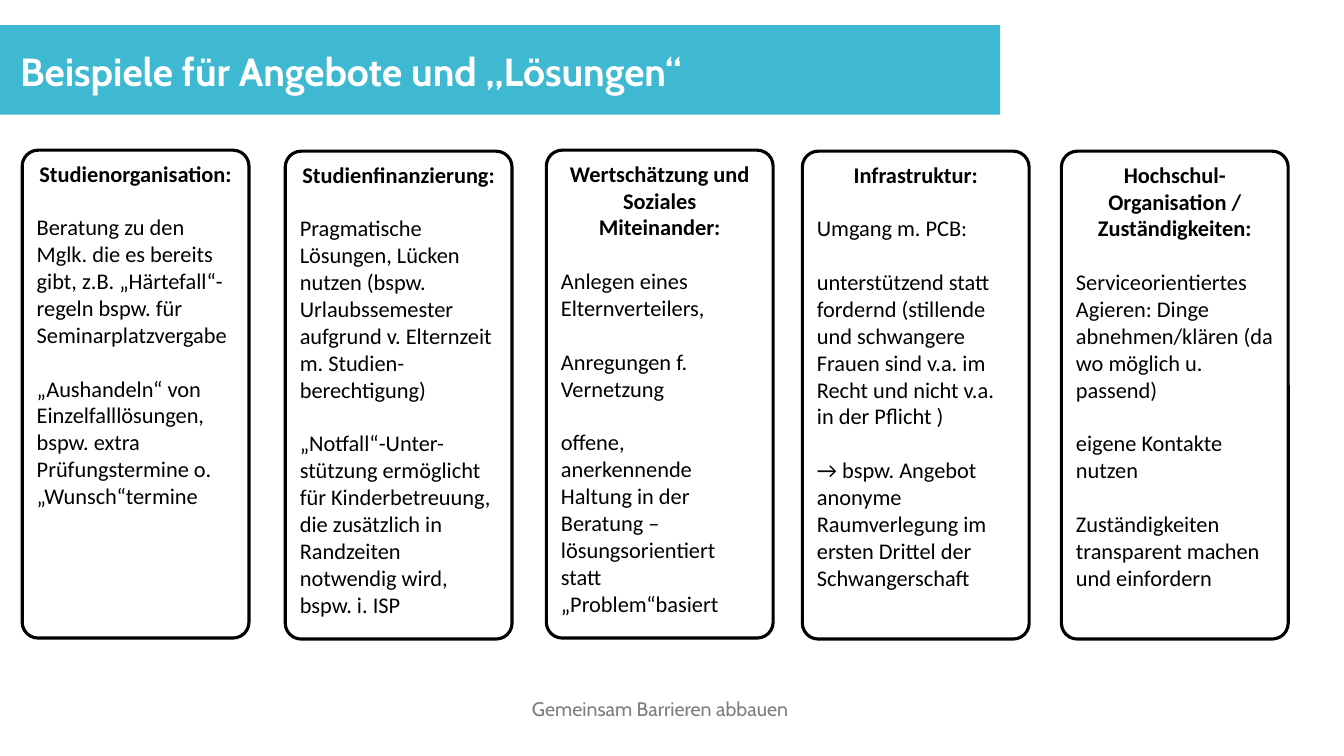
from pptx import Presentation
from pptx.dml.color import RGBColor
from pptx.enum import shapes, text
from pptx.util import Pt

TEAL = RGBColor(0x3F, 0xB9, 0xD2)
WHITE = RGBColor(0xFF, 0xFF, 0xFF)
BLACK = RGBColor(0, 0, 0)
GREY = RGBColor(0x7E, 0x7E, 0x7E)

TITLE = "Beispiele für Angebote und „Lösungen“"
FOOTER = "Gemeinsam Barrieren abbauen"
CARDS = [
    (15.84, 107.28, ["Studienorganisation:"], [
        "Beratung zu den Mglk. die es bereits gibt, z.B. „Härtefall“- regeln bspw. für Seminarplatzvergabe",
        "„Aushandeln“ von Einzelfalllösungen, bspw. extra Prüfungstermine o. „Wunsch“termine",
    ]),
    (203.76, 108, ["Studienfinanzierung:"], [
        "Pragmatische Lösungen, Lücken nutzen (bspw. Urlaubssemester aufgrund v. Elternzeit m. Studien-berechtigung)",
        "„Notfall“-Unter-stützung ermöglicht für Kinderbetreuung, die zusätzlich in Randzeiten notwendig wird, bspw. i. ISP",
    ]),
    (390.24, 107.28, ["Wertschätzung und", "Soziales Miteinander:"], [
        "Anlegen eines Elternverteilers,",
        "Anregungen f. Vernetzung",
        "offene, anerkennende Haltung in der Beratung – lösungsorientiert statt „Problem“basiert",
    ]),
    (573.12, 108, ["Infrastruktur:"], [
        "Umgang m. PCB:",
        "unterstützend statt fordernd (stillende und schwangere Frauen sind v.a. im Recht und nicht v.a. in der Pflicht )",
        "→ bspw. Angebot anonyme Raumverlegung im ersten Drittel der Schwangerschaft",
    ]),
    (758.16, 108, ["Hochschul-", "Organisation / Zuständigkeiten:"], [
        "Serviceorientiertes Agieren: Dinge abnehmen/klären (da wo möglich u. passend)",
        "eigene Kontakte nutzen",
        "Zuständigkeiten transparent machen und einfordern",
    ]),
]
CARD_WIDTH, CARD_HEIGHT = 162, 348.48
CARD_CORNER = 0.07
PARAGRAPH_GAP = 19.2


def add_run(paragraph, words, size, font_name, color, bold=False):
    run = paragraph.add_run()
    run.text = words
    run.font.size = Pt(size)
    run.font.name = font_name
    run.font.bold = bold
    run.font.color.rgb = color


def prepare_frame(shape, left, top, right, bottom):
    frame = shape.text_frame
    frame.word_wrap = True
    frame.vertical_anchor = text.MSO_ANCHOR.TOP
    frame.margin_left, frame.margin_top = Pt(left), Pt(top)
    frame.margin_right, frame.margin_bottom = Pt(right), Pt(bottom)
    return frame


def add_card(slide, left, top, headings, entries):
    card = slide.shapes.add_shape(shapes.MSO_SHAPE.ROUNDED_RECTANGLE,
                                  Pt(left), Pt(top), Pt(CARD_WIDTH), Pt(CARD_HEIGHT))
    card.adjustments[0] = CARD_CORNER
    card.shadow.inherit = False
    card.fill.background()
    card.line.color.rgb = BLACK
    card.line.width = Pt(2.25)
    frame = prepare_frame(card, 7.2, 3.6, 7.2, 3.6)
    for index, words in enumerate(headings + entries):
        is_heading = index < len(headings)
        paragraph = frame.add_paragraph() if index else frame.paragraphs[0]
        paragraph.alignment = text.PP_ALIGN.CENTER if is_heading else text.PP_ALIGN.LEFT
        if not is_heading:
            paragraph.space_before = Pt(PARAGRAPH_GAP)
        add_run(paragraph, words, 16, "Calibri", BLACK, is_heading)


def main():
    presentation = Presentation()
    presentation.slide_width, presentation.slide_height = Pt(960), Pt(540)
    slide = presentation.slides.add_slide(presentation.slide_layouts[6])

    banner = slide.shapes.add_shape(shapes.MSO_SHAPE.RECTANGLE, 0, Pt(18), Pt(714.5), Pt(64))
    banner.shadow.inherit = False
    banner.fill.solid()
    banner.fill.fore_color.rgb = TEAL
    banner.line.fill.background()

    title = slide.shapes.add_textbox(0, Pt(30.24), Pt(540), Pt(41))
    title_frame = prepare_frame(title, 14.4, 3.6, 7.2, 3.6)
    add_run(title_frame.paragraphs[0], TITLE, 28, "Cabin", WHITE, True)

    for card in CARDS:
        add_card(slide, *card)

    footer = slide.shapes.add_textbox(Pt(308.16), Pt(505.44), Pt(326.88), Pt(10.8))
    paragraph = prepare_frame(footer, 0, 0, 0, 0).paragraphs[0]
    paragraph.alignment = text.PP_ALIGN.CENTER
    paragraph.line_spacing = Pt(9.1)
    add_run(paragraph, FOOTER, 14, "Cabin", GREY)

    presentation.save("out.pptx")


if __name__ == "__main__":
    main()
